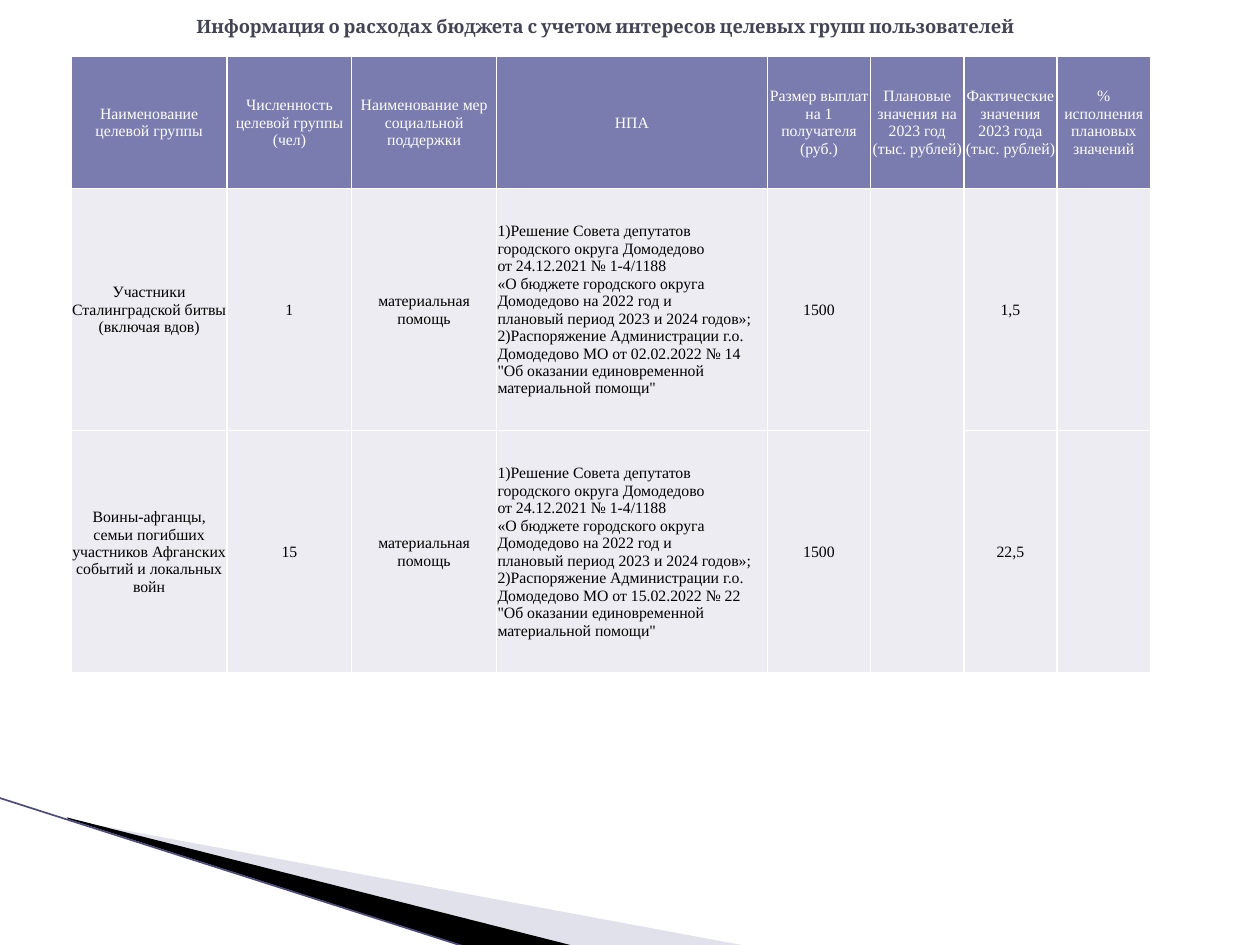
from lxml import etree
from pptx import Presentation, util as u
from pptx.dml.color import RGBColor
from pptx.enum import shapes, text
from pptx.oxml.ns import qn

THEME = {
    "ink": "000000", "title": "424456", "head": "7A7BAE", "body": "ECECF2",
    "white": "FFFFFF", "pale": "B6B6D1", "edge": "4B4C7C",
    "serif": "Cambria", "roman": "Times New Roman",
    "big": u.Pt(10.5), "small": u.Pt(9), "rule": u.Pt(1), "thin": u.Pt(0.95),
}

TITLE = "Информация о расходах бюджета с учетом интересов целевых групп пользователей"
HEAD = [
    "Наименование целевой группы",
    "Численность целевой группы (чел)",
    "Наименование мер социальной поддержки",
    "НПА",
    "Размер выплат на 1 получателя (руб.)",
    "Плановые значения на 2023 год (тыс. рублей)",
    "Фактические значения 2023 года (тыс. рублей)",
    "% исполнения плановых значений",
]
ACT = """1)Решение Совета депутатов
городского округа Домодедово
от 24.12.2021 № 1-4/1188
«О бюджете городского округа
Домодедово на 2022 год и
плановый период 2023 и 2024 годов»; 2)Распоряжение Администрации г.о. \
Домодедово МО от {} "Об оказании единовременной материальной помощи\""""
AID = "материальная помощь"
ROWS = [
    HEAD,
    ["Участники Сталинградской битвы (включая вдов)", "1", AID,
     ACT.format("02.02.2022 № 14"), "1500", "", "1,5", ""],
    ["Воины-афганцы, семьи погибших участников Афганских событий и локальных войн",
     "15", AID, ACT.format("15.02.2022 № 22"), "1500", "", "22,5", ""],
]
ACT_COL, PLAN_COL = 3, 5
WIDTHS = [3.15, 2.51, 2.92, 5.46, 2.08, 1.88, 1.88, 1.88]
HEIGHTS = [2.67, 4.88, 4.88]

# Corner wedges: fill, opacity in percent, corners in cm
WEDGES = [
    ("pale", 40, [(1.4, 16.53), (15.11, 19.08), (11.58, 19.08), (1.4, 16.51)]),
    ("ink", 100, [(1.35, 16.48), (11.61, 19.08), (9.45, 19.1), (1.37, 16.51)]),
]
EDGE = (-0.03, 16.08, 9.42, 19.1)


def tint(name):
    return RGBColor.from_string(THEME[name])


def paint(fill, name):
    fill.solid()
    fill.fore_color.rgb = tint(name)


def style(font, face, size, color, bold=False):
    font.name, font.size, font.bold = THEME[face], THEME[size], bold
    font.color.rgb = tint(color)


def add_wedge(slide, color, alpha, points):
    spots = [(u.Cm(x), u.Cm(y)) for x, y in points]
    pen = slide.shapes.build_freeform(*spots[0])
    pen.add_line_segments(spots[1:])
    wedge = pen.convert_to_shape()
    wedge.shadow.inherit = False
    wedge.line.fill.background()
    paint(wedge.fill, color)
    if alpha < 100:
        tone = wedge.fill._xPr.find(".//" + qn("a:srgbClr"))
        etree.SubElement(tone, qn("a:alpha"), val=str(alpha * 1000))


def add_edge(slide):
    line = slide.shapes.add_connector(
        shapes.MSO_CONNECTOR.STRAIGHT, *[u.Cm(v) for v in EDGE])
    line.line.color.rgb = tint("edge")
    line.line.width = THEME["thin"]
    etree.SubElement(line._element.spPr, qn("a:effectLst"))


def add_title(slide):
    box = slide.shapes.add_textbox(u.Cm(3.71), u.Cm(-0.28), u.Cm(19.51), u.Cm(1.6))
    frame = box.text_frame
    frame.word_wrap = True
    frame.vertical_anchor = text.MSO_ANCHOR.MIDDLE
    frame.text = TITLE
    style(frame.paragraphs[0].font, "serif", "big", "title", True)


def rule_cell(cell):
    """Draw the four borders; they must stand before the fill in tcPr."""
    props = cell._tc.get_or_add_tcPr()
    for at, side in enumerate(("lnL", "lnR", "lnT", "lnB")):
        rule = etree.Element(qn("a:" + side), w=str(THEME["rule"]))
        solid = etree.SubElement(rule, qn("a:solidFill"))
        etree.SubElement(solid, qn("a:srgbClr"), val=THEME["white"])
        props.insert(at, rule)


def fill_cell(cell, words, head, align):
    cell.margin_left = cell.margin_right = cell.margin_top = u.Cm(0.02)
    cell.margin_bottom = 0
    cell.vertical_anchor = text.MSO_ANCHOR.MIDDLE
    cell.text = words
    for para in cell.text_frame.paragraphs:
        para.alignment = align
        style(para.font, "roman", "small", "white" if head else "ink")
    paint(cell.fill, "head" if head else "body")
    rule_cell(cell)


def add_grid(slide):
    grid = slide.shapes.add_table(
        len(ROWS), len(HEAD), u.Cm(1.43), u.Cm(1.13),
        u.Cm(sum(WIDTHS)), u.Cm(sum(HEIGHTS))).table
    for col, width in zip(grid.columns, WIDTHS):
        col.width = u.Cm(width)
    for row, height in zip(grid.rows, HEIGHTS):
        row.height = u.Cm(height)
    for r, row in enumerate(ROWS):
        for c, words in enumerate(row):
            left = r > 0 and c == ACT_COL
            align = text.PP_ALIGN.LEFT if left else text.PP_ALIGN.CENTER
            fill_cell(grid.cell(r, c), words, r == 0, align)
    grid.cell(1, PLAN_COL).merge(grid.cell(2, PLAN_COL))


def main():
    deck = Presentation()
    deck.slide_width, deck.slide_height = u.Cm(25.4), u.Cm(19.05)
    slide = deck.slides.add_slide(deck.slide_layouts[6])
    for wedge in WEDGES:
        add_wedge(slide, *wedge)
    add_edge(slide)
    add_title(slide)
    add_grid(slide)
    deck.save("out.pptx")


if __name__ == "__main__":
    main()
